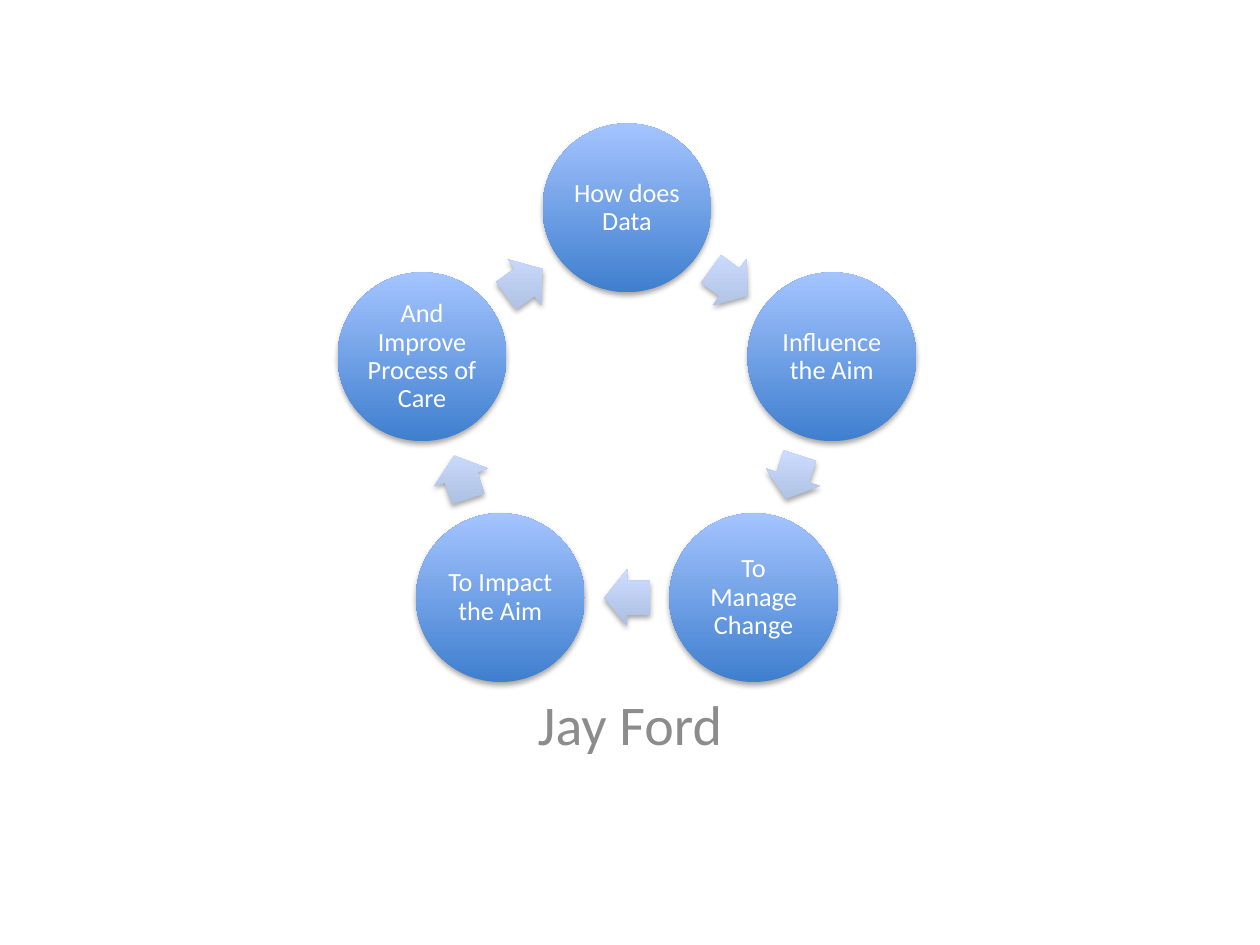
import math

import lxml.etree
import pptx
import pptx.dml.color
import pptx.enum.shapes
import pptx.enum.text
import pptx.oxml.ns
import pptx.util

Inches = pptx.util.Inches
Pt = pptx.util.Pt
qn = pptx.oxml.ns.qn
SHAPES = pptx.enum.shapes.MSO_SHAPE
STEPS = [
    "How does Data",
    "Influence the Aim",
    "To Manage Change",
    "To Impact the Aim",
    "And Improve Process of Care",
]


def color(value):
    """Turn a hex string into a colour."""
    return pptx.dml.color.RGBColor.from_string(value)


def write(shape, text, size, fill, anchor, inset=None, line_spacing=None):
    """Write one centred paragraph into a shape."""
    frame = shape.text_frame
    frame.word_wrap = True
    frame.vertical_anchor = anchor
    if inset is not None:
        frame.margin_left = frame.margin_right = inset
        frame.margin_top = frame.margin_bottom = inset
    para = frame.paragraphs[0]
    para.alignment = pptx.enum.text.PP_ALIGN.CENTER
    if line_spacing is not None:
        para.line_spacing = line_spacing
    span = para.add_run()
    span.text = text
    span.font.name = "Calibri"
    span.font.size = Pt(size)
    span.font.color.rgb = color(fill)


def add_shadow(shape):
    """Give a shape a soft shadow that falls straight down."""
    shape.shadow.inherit = False
    effects = shape._element.spPr.find(qn("a:effectLst"))
    shadow = lxml.etree.SubElement(
        effects, qn("a:outerShdw"), blurRad=str(Pt(3.1)), dist=str(Pt(1.8)),
        dir="5400000", rotWithShape="0")
    tone = lxml.etree.SubElement(shadow, qn("a:srgbClr"), val="000000")
    lxml.etree.SubElement(tone, qn("a:alpha"), val="35000")


def add_glossy(page, kind, center, width, height, bottom, top):
    """Add a centred shape with an upright gradient and a shadow."""
    x, y = center
    shape = page.shapes.add_shape(
        kind, int(x - width / 2), int(y - height / 2), width, height)
    shape.fill.gradient()
    shape.fill.gradient_angle = 90
    for stop, value in zip(shape.fill.gradient_stops, (bottom, top)):
        stop.color.rgb = color(value)
    shape._element.spPr.find(qn("a:gradFill")).set("rotWithShape", "0")
    shape.line.fill.background()
    add_shadow(shape)
    return shape


def add_cycle(page, left, top, diameter, radius):
    """Place the steps clockwise on a ring with an arrow after each."""
    turn = 360 / len(STEPS)
    reach = radius * math.cos(math.radians(turn / 2))
    middle_x = left + diameter / 2 + radius * math.sin(math.radians(turn))
    middle_y = top + diameter / 2 + radius

    def on_ring(angle, distance):
        """Find the point at a clockwise angle from the top."""
        angle = math.radians(angle)
        return (middle_x + distance * math.sin(angle),
                middle_y - distance * math.cos(angle))

    for index, step in enumerate(STEPS):
        circle = add_glossy(page, SHAPES.OVAL, on_ring(index * turn, radius),
                            diameter, diameter, "3F7FCE", "A4C4FF")
        write(circle, step, 15, "FFFFFF", pptx.enum.text.MSO_ANCHOR.MIDDLE,
              inset=Inches(0.02), line_spacing=0.9)
        angle = (index + 0.5) * turn
        arrow = add_glossy(page, SHAPES.RIGHT_ARROW, on_ring(angle, reach),
                           Inches(0.36), Inches(0.45), "ADBFE1", "CCDDFF")
        arrow.adjustments[0] = 0.6
        arrow.adjustments[1] = 0.5
        arrow.rotation = angle


def place_subtitle(page, left, top, width, height):
    """Move the subtitle into its box and write the name."""
    box = page.placeholders[1]
    box.left, box.top, box.width, box.height = left, top, width, height
    write(box, "Jay Ford", 32, "8C8C8C", pptx.enum.text.MSO_ANCHOR.TOP)


def main():
    """Build the deck and save it."""
    deck = pptx.Presentation()
    deck.slide_width, deck.slide_height = Inches(10), Inches(7.5)
    page = deck.slides.add_slide(deck.slide_layouts[0])
    title = page.shapes.title._element
    title.getparent().remove(title)
    add_cycle(page, Inches(2.68), Inches(0.98), Inches(1.34), Inches(1.71))
    place_subtitle(page, Inches(1.5), Inches(5.42), Inches(7), Inches(0.74))
    deck.save("out.pptx")


if __name__ == "__main__":
    main()
